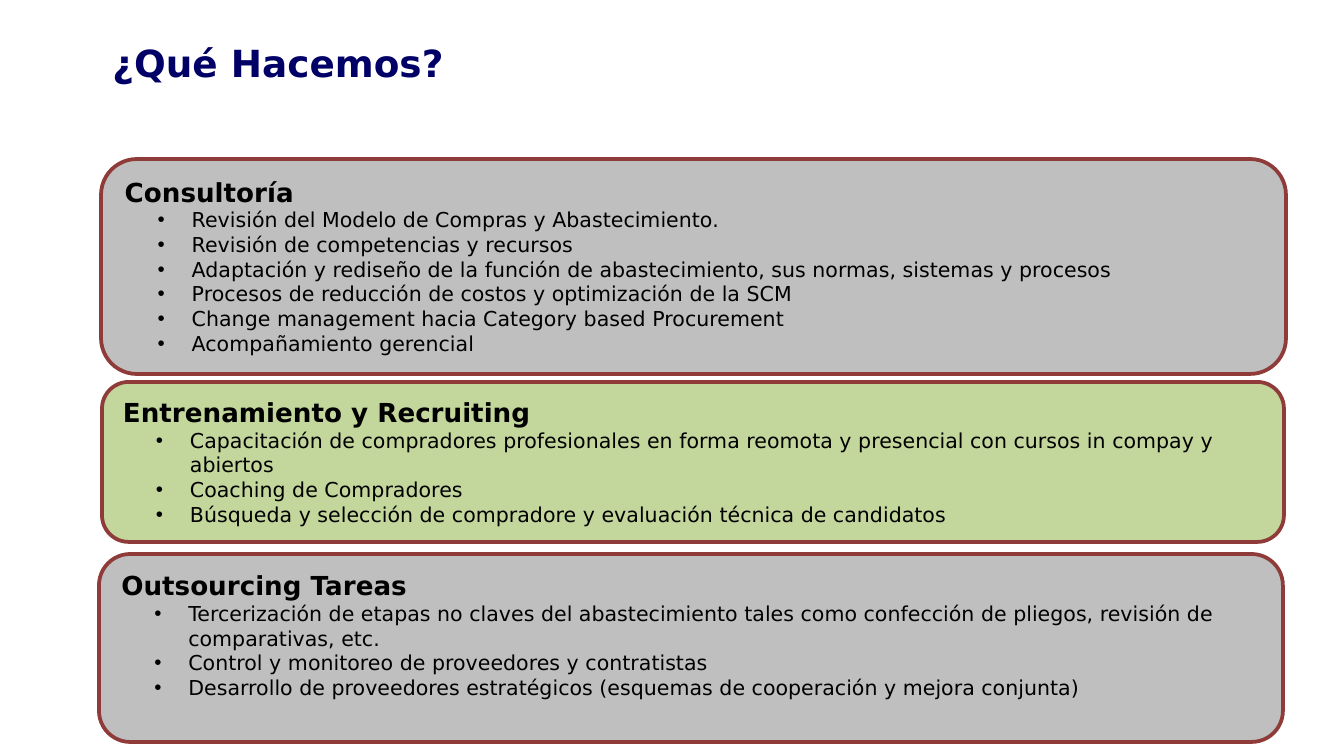
from pptx import Presentation
from pptx.dml.color import RGBColor as Rgb
from pptx.enum.shapes import MSO_SHAPE as Shape
from pptx.enum.text import MSO_ANCHOR as Anchor, PP_ALIGN as Align
from pptx.oxml.ns import qn
from pptx.util import Pt
from lxml.etree import SubElement as Sub

PX = 914400 / 134.4  # EMU in one px
FONT = "DejaVu Sans"
HUES = {"title": "000066", "text": "000000", "line": "8E3B39",
        "gray": "BFBFBF", "green": "C3D69B"}

# Place, fill, heading and points of each service
CARDS = [
    ((101, 159, 1185, 215), "gray", "Consultoría", [
        "Revisión del Modelo de Compras y Abastecimiento.",
        "Revisión de competencias y recursos",
        "Adaptación y rediseño de la función de abastecimiento, sus normas, "
        "sistemas y procesos",
        "Procesos de reducción de costos y optimización de la SCM",
        "Change management hacia Category based Procurement",
        "Acompañamiento gerencial"]),
    ((102, 382, 1182, 160), "green", "Entrenamiento y Recruiting", [
        "Capacitación de compradores profesionales en forma reomota y "
        "presencial con cursos in compay y abiertos",
        "Coaching de Compradores",
        "Búsqueda y selección de compradore y evaluación técnica de "
        "candidatos"]),
    ((99, 554, 1184, 188), "gray", "Outsourcing Tareas", [
        "Tercerización de etapas no claves del abastecimiento tales como "
        "confección de pliegos, revisión de comparativas, etc.",
        "Control y monitoreo de proveedores y contratistas",
        "Desarrollo de proveedores estratégicos (esquemas de cooperación y "
        "mejora conjunta)"]),
]


def px(n):
    return round(n * PX)


def hue(name):
    return Rgb.from_string(HUES[name])


def write(para, text, size=11, bold=False, color="text", bullet=False):
    para.alignment = Align.LEFT
    run = para.add_run()
    run.text = text
    font = run.font
    font.name, font.size, font.bold = FONT, Pt(size), bold
    font.color.rgb = hue(color)
    if bullet:
        para.level = 1
        props = para._p.get_or_add_pPr()
        props.set("marL", str(px(67)))
        props.set("indent", str(px(-34)))
        Sub(props, qn("a:buFont"), typeface="Arial")
        Sub(props, qn("a:buChar"), char="•")


def head(slide, text):
    title = slide.shapes.title
    title.left, title.top, title.width, title.height = map(
        px, (99, 41, 879, 44))
    title.text_frame.vertical_anchor = Anchor.MIDDLE
    write(title.text_frame.paragraphs[0], text, size=20, bold=True,
          color="title")


def card(slide, box, fill, name, points):
    shape = slide.shapes.add_shape(Shape.FLOWCHART_ALTERNATE_PROCESS,
                                   *map(px, box))
    shape.shadow.inherit = False
    shape.fill.solid()
    shape.fill.fore_color.rgb = hue(fill)
    shape.line.color.rgb = hue("line")
    shape.line.width = Pt(2)
    frame = shape.text_frame
    frame.word_wrap = True
    frame.vertical_anchor = Anchor.TOP
    write(frame.paragraphs[0], name, size=14, bold=True)
    for point in points:
        write(frame.add_paragraph(), point, bullet=True)


def main():
    deck = Presentation()
    deck.slide_width, deck.slide_height = px(1344), px(756)
    slide = deck.slides.add_slide(deck.slide_layouts[5])
    head(slide, "¿Qué Hacemos?")
    for item in CARDS:
        card(slide, *item)
    deck.save("out.pptx")


if __name__ == "__main__":
    main()
